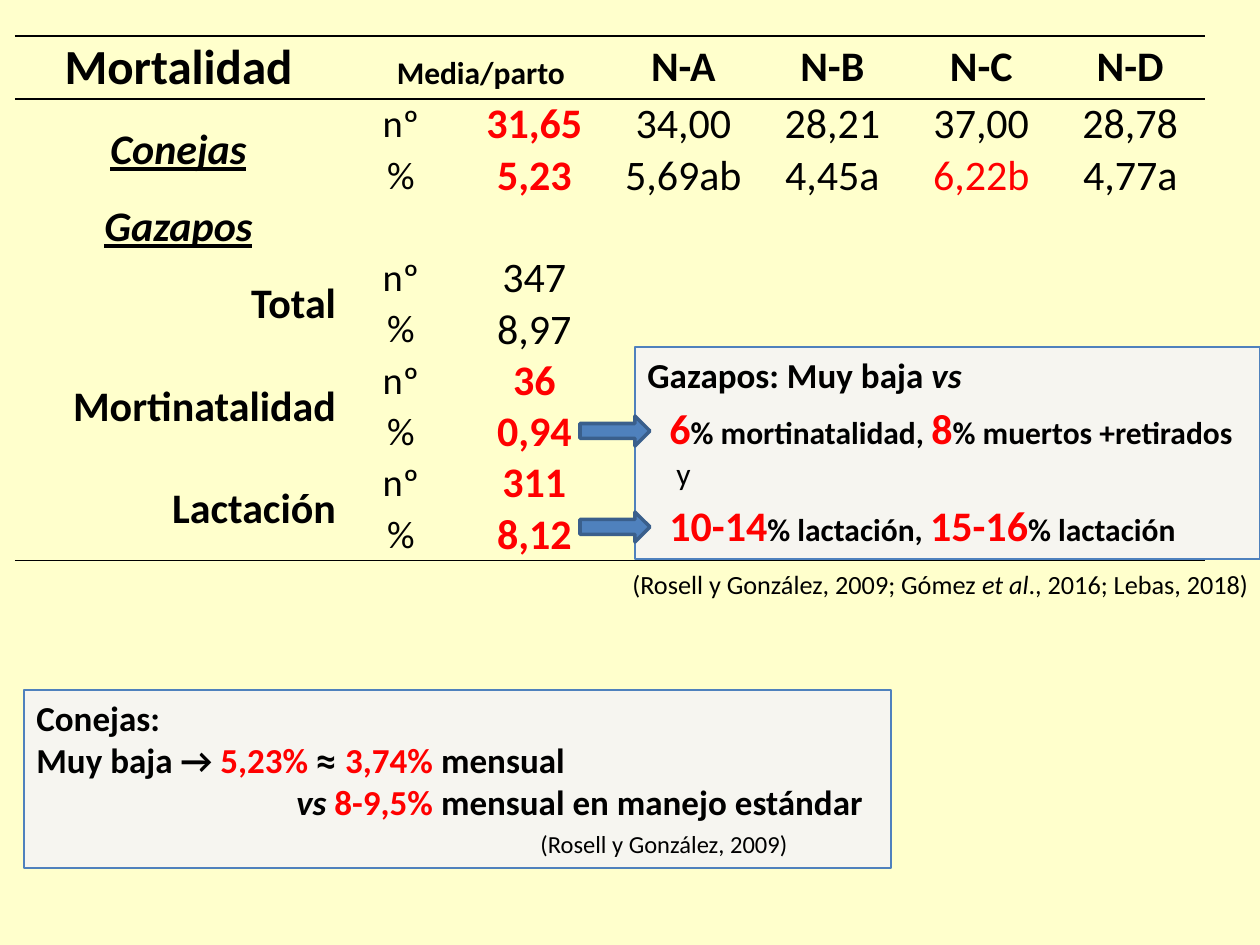
from lxml import etree
from pptx import Presentation
from pptx import util as u
from pptx.dml.color import RGBColor
from pptx.enum import shapes, text
from pptx.oxml import ns

COLORS = {"page": "FFFFCC", "ink": "000000", "alert": "FF0000",
          "panel": "F6F5F0", "accent": "4F81BD", "edge": "3A5F8C"}
PLAIN_STYLE = "{2D5ABB26-0587-4C30-8999-92F81FD0307C}"
CENTER, RIGHT = text.PP_ALIGN.CENTER, text.PP_ALIGN.RIGHT
RED = {"color": "alert"}
BIG_RED = {"color": "alert", "size": 24}


def px(n):
    return u.Emu(round(n * 914400 / 126))


def rgb(name):
    return RGBColor.from_string(COLORS[name])


class Deck:
    font = "Calibri"

    def __init__(self, width, height):
        self.prs = Presentation()
        self.prs.slide_width, self.prs.slide_height = px(width), px(height)
        self.s = self.prs.slides.add_slide(self.prs.slide_layouts[6])
        self.s.background.fill.solid()
        self.s.background.fill.fore_color.rgb = rgb("page")

    def style(self, font, size=None, color=None, name=None, **flags):
        if size:
            font.size = u.Pt(size)
        if color:
            font.color.rgb = rgb(color)
        if name:
            font.name = name
        for flag, value in flags.items():
            setattr(font, flag, value)

    def paragraph(self, p, runs, indent=0, before=0, after=0, align=None, **look):
        self.style(p.font, **{"name": self.font, "color": "ink", **look})
        p.alignment = align
        if before or after:
            p.space_before, p.space_after = u.Pt(before), u.Pt(after)
        if indent:
            p._p.get_or_add_pPr().set("marL", str(px(indent)))
        for words, changes in runs:
            r = p.add_run()
            r.text = words
            self.style(r.font, **changes)

    def fill_text(self, sp, paragraphs):
        tf = sp.text_frame
        tf.word_wrap = True
        tf.vertical_anchor = text.MSO_ANCHOR.TOP
        for i, (runs, look) in enumerate(paragraphs):
            p = tf.add_paragraph() if i else tf.paragraphs[0]
            self.paragraph(p, runs, **{"align": text.PP_ALIGN.LEFT, **look})

    def shape(self, kind, box, fill, line, weight):
        sp = self.s.shapes.add_shape(kind, *map(px, box))
        sp.shadow.inherit = False
        sp.fill.solid()
        sp.fill.fore_color.rgb = rgb(fill)
        sp.line.color.rgb = rgb(line)
        sp.line.width = u.Pt(weight)
        return sp

    def panel(self, box, paragraphs):
        sp = self.shape(shapes.MSO_SHAPE.RECTANGLE, box, "panel", "accent", 0.75)
        self.fill_text(sp, paragraphs)

    def arrow(self, box):
        self.shape(shapes.MSO_SHAPE.RIGHT_ARROW, box, "accent", "edge", 2)

    def label(self, box, paragraphs):
        self.fill_text(self.s.shapes.add_textbox(*map(px, box)), paragraphs)

    def border(self, cell, *sides):
        tcPr = cell._tc.get_or_add_tcPr()
        for i, side in enumerate(sides):
            ln = etree.Element(ns.qn(f"a:{side}"), w=str(u.Pt(1)))
            fill = etree.SubElement(ln, ns.qn("a:solidFill"))
            etree.SubElement(fill, ns.qn("a:srgbClr"), val=COLORS["ink"])
            tcPr.insert(i, ln)

    def table(self, left, top, widths, heights, rows, look_of, merges):
        frame = self.s.shapes.add_table(len(rows), len(widths), px(left), px(top),
                                        px(sum(widths)), px(sum(heights)))
        table = frame.table
        table.first_row = table.horz_banding = False
        table._tbl.tblPr.find(ns.qn("a:tableStyleId")).text = PLAIN_STYLE
        for column, width in zip(table.columns, widths):
            column.width = px(width)
        for row, height in zip(table.rows, heights):
            row.height = px(height)
        for i, row in enumerate(rows):
            for j, words in enumerate(row):
                cell = table.cell(i, j)
                cell.margin_left = cell.margin_right = px(6)
                cell.margin_top = cell.margin_bottom = 0
                cell.vertical_anchor = text.MSO_ANCHOR.MIDDLE
                cell.fill.background()
                if i == 0:
                    self.border(cell, "lnT", "lnB")
                elif i == len(rows) - 1:
                    self.border(cell, "lnB")
                if words:
                    self.paragraph(cell.text_frame.paragraphs[0], [(words, {})],
                                   **look_of(i, j))
        for start, end in merges:
            table.cell(*start).merge(table.cell(*end))
            if end[0] == len(rows) - 1:
                self.border(table.cell(*start), "lnB")
        return table


def mortality_look(row, col):
    look = {"size": 24, "align": CENTER, "bold": row == 0 or col == 0}
    if row == 0 and col < 2:
        look["size"] = (28, 18)[col]
    elif col == 0 and row in (1, 3):
        look.update(italic=True, underline=True)
    elif col == 0:
        look["align"] = RIGHT
    elif col == 1:
        look["size"] = 22
    elif col == 2 and row not in (0, 4, 5):
        look.update(color="alert", bold=True)
    elif (row, col) == (2, 5):
        look["color"] = "alert"
    return look


def main():
    deck = Deck(1260, 945)
    blank = [""] * 4
    rows = [
        ["Mortalidad", "Media/parto", "", "N-A", "N-B", "N-C", "N-D"],
        ["Conejas", "nº", "31,65", "34,00", "28,21", "37,00", "28,78"],
        ["", "%", "5,23", "5,69ab", "4,45a", "6,22b", "4,77a"],
        ["Gazapos", "", "", *blank],
        ["Total", "nº", "347", *blank],
        ["", "%", "8,97", *blank],
        ["Mortinatalidad", "nº", "36", *blank],
        ["", "%", "0,94", *blank],
        ["Lactación", "nº", "311", *blank],
        ["", "%", "8,12", *blank],
    ]
    merges = [((0, 1), (0, 2))] + [((i, 0), (i + 1, 0)) for i in (1, 4, 6, 8)]
    table = deck.table(15, 36, [327, 118] + [149] * 5, [63] + [51] * 9,
                       rows, mortality_look, merges)
    heading = table.cell(0, 1)
    heading.margin_left, heading.margin_top = px(17), px(12)

    deck.panel((24, 690, 867, 178), [
        ([("Conejas:", {})], {"size": 20, "bold": True}),
        ([("Muy baja → ", {}), ("5,23% ", RED), ("≈ ", {"name": "Roboto"}),
          ("3,74%", RED), (" mensual", {})], {"size": 20, "bold": True}),
        ([("vs ", {"italic": True}), ("8-9,5% ", RED),
          ("mensual en manejo estándar", {})],
         {"size": 20, "bold": True, "indent": 260}),
        ([("(Rosell y González, 2009)", {})],
         {"size": 14, "indent": 504, "before": 4}),
    ])

    rates = {"size": 18, "bold": True, "indent": 22, "before": 4, "after": 1}
    deck.panel((635, 347, 625, 212), [
        ([("Gazapos: Muy baja ", {}), ("vs", {"italic": True})],
         {"size": 20, "bold": True}),
        ([("6", BIG_RED), ("% mortinatalidad, ", {}), ("8", BIG_RED),
          ("% muertos +retirados", {})], rates),
        ([("y", {})], {"size": 18, "indent": 29}),
        ([("10-14", BIG_RED), ("% lactación, ", {}), ("15-16", BIG_RED),
          ("% lactación", {})], rates),
    ])
    deck.label((620, 562, 665, 44), [
        ([("(Rosell y González, 2009; Gómez ", {}), ("et al", {"italic": True}),
          ("., 2016; Lebas, 2018)", {})], {"size": 15}),
    ])
    for top in (416, 512):
        deck.arrow((580, top, 70, 30))
    deck.prs.save("out.pptx")


if __name__ == "__main__":
    main()
